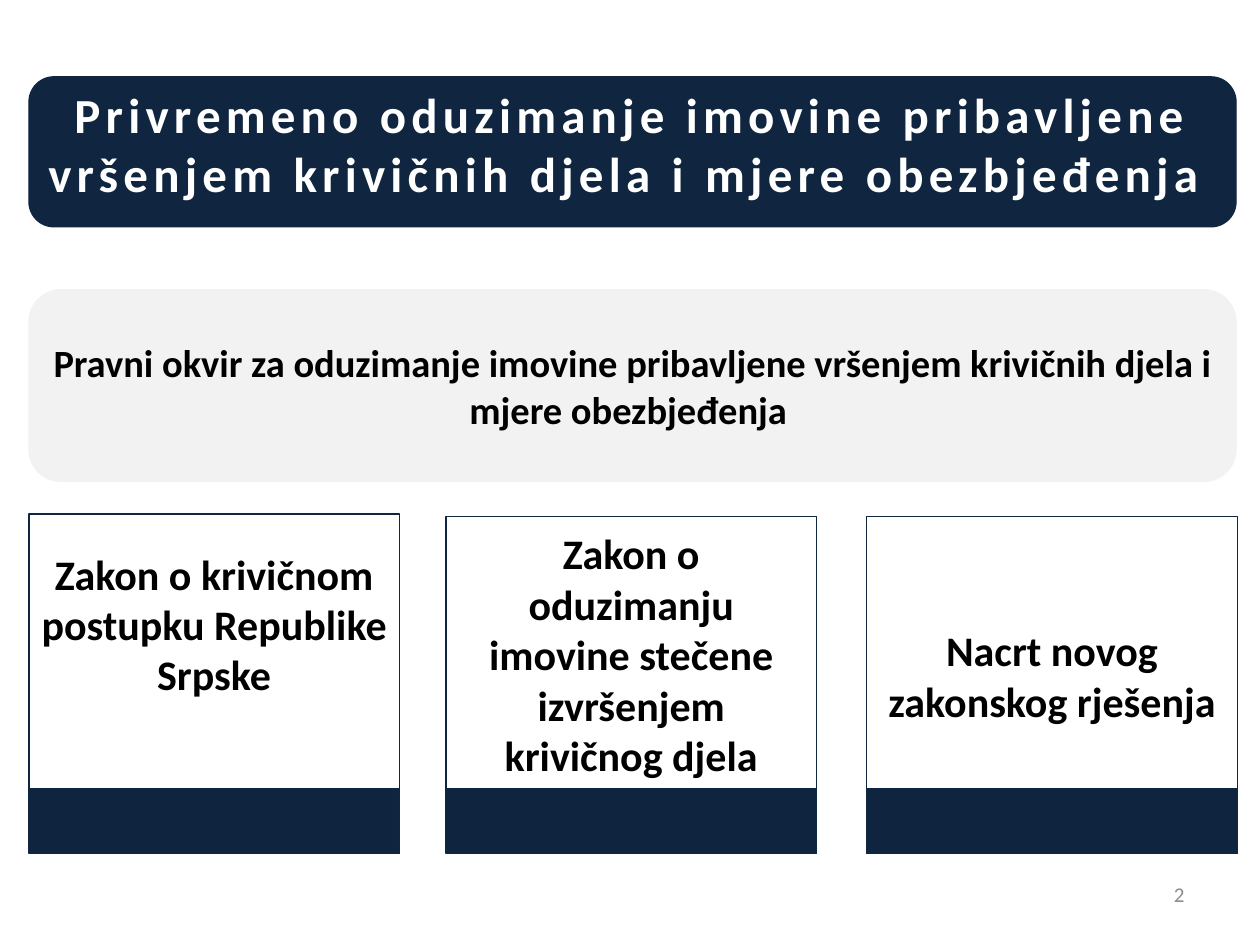
from pptx import Presentation
from pptx.dml.color import RGBColor
from pptx.enum.shapes import MSO_SHAPE
from pptx.enum.text import MSO_ANCHOR, PP_ALIGN
from pptx.util import Inches, Pt

RECT, ROUND = MSO_SHAPE.RECTANGLE, MSO_SHAPE.ROUNDED_RECTANGLE
TOP, MIDDLE = MSO_ANCHOR.TOP, MSO_ANCHOR.MIDDLE
CENTER, RIGHT = PP_ALIGN.CENTER, PP_ALIGN.RIGHT

NAVY = RGBColor(0x10, 0x25, 0x3F)
DARK = RGBColor(0x0F, 0x24, 0x3E)
PALE = RGBColor(0xF2, 0xF2, 0xF2)
GRAY = RGBColor(0x8C, 0x8C, 0x8C)
WHITE = RGBColor(0xFF, 0xFF, 0xFF)
BLACK = RGBColor(0, 0, 0)

LEFT, WIDE = 0.23, 9.58
CARD, FOOT = 2.94, 6.77

prs = Presentation()
prs.slide_width, prs.slide_height = Inches(10), Inches(7.5)
slide = prs.slides.add_slide(prs.slide_layouts[5])
shapes = slide.shapes


def add_box(kind, x, y, w, h, fill, edge):
    box = shapes.add_shape(kind, Inches(x), Inches(y), Inches(w), Inches(h))
    box.shadow.inherit = False
    box.fill.solid()
    box.fill.fore_color.rgb = fill
    box.line.color.rgb = edge
    box.line.width = Pt(0.75)
    return box


def set_text(shape, text, size, color, bold=True, align=CENTER, anchor=TOP):
    frame = shape.text_frame
    frame.text = text
    frame.word_wrap = True
    frame.vertical_anchor = anchor
    para = frame.paragraphs[0]
    para.alignment = align
    font = para.runs[0].font
    font.name, font.size, font.bold = "Calibri", Pt(size), bold
    font.color.rgb = color
    return para.runs[0]


# Title on its dark banner
add_box(ROUND, LEFT, 0.61, WIDE, 1.19, NAVY, NAVY)
title = shapes.title
title.left, title.top = Inches(LEFT), Inches(0.62)
title.width, title.height = Inches(WIDE), Inches(1.04)
run = set_text(title, "Privremeno oduzimanje imovine pribavljene vršenjem "
               "krivičnih djela i mjere obezbjeđenja ", 28, WHITE)
run.font._element.set("spc", "300")
title.element.getparent().append(title.element)  # bring in front of the banner

# Legal framework panel
panel = add_box(ROUND, LEFT, 2.3, WIDE, 1.52, PALE, PALE)
set_text(panel, "Pravni okvir za oduzimanje imovine pribavljene vršenjem "
         "krivičnih djela i mjere obezbjeđenja ", 22, BLACK, anchor=MIDDLE)

# Three law cards: left, card top, text top, text height, wording
cards = [
    (LEFT, 4.08, 4.3, 1.31, "Zakon o krivičnom postupku Republike Srpske"),
    (3.54, 4.1, 4.14, 2.12,
     "Zakon o oduzimanju imovine stečene izvršenjem krivičnog djela"),
    (6.88, 4.1, 4.91, 0.91, "Nacrt novog zakonskog rješenja"),
]
for x, top, y, high, text in cards:
    add_box(RECT, x, top, CARD, FOOT - top, WHITE, NAVY)
    add_box(RECT, x, 6.26, CARD, FOOT - 6.26, DARK, NAVY)
    label = shapes.add_textbox(Inches(x), Inches(y), Inches(CARD), Inches(high))
    set_text(label, text, 24, BLACK)

# Slide number
number = shapes.add_textbox(Inches(7.17), Inches(6.9), Inches(2.33), Inches(0.4))
set_text(number, "2", 12, GRAY, bold=False, align=RIGHT, anchor=MIDDLE)

prs.save("out.pptx")
